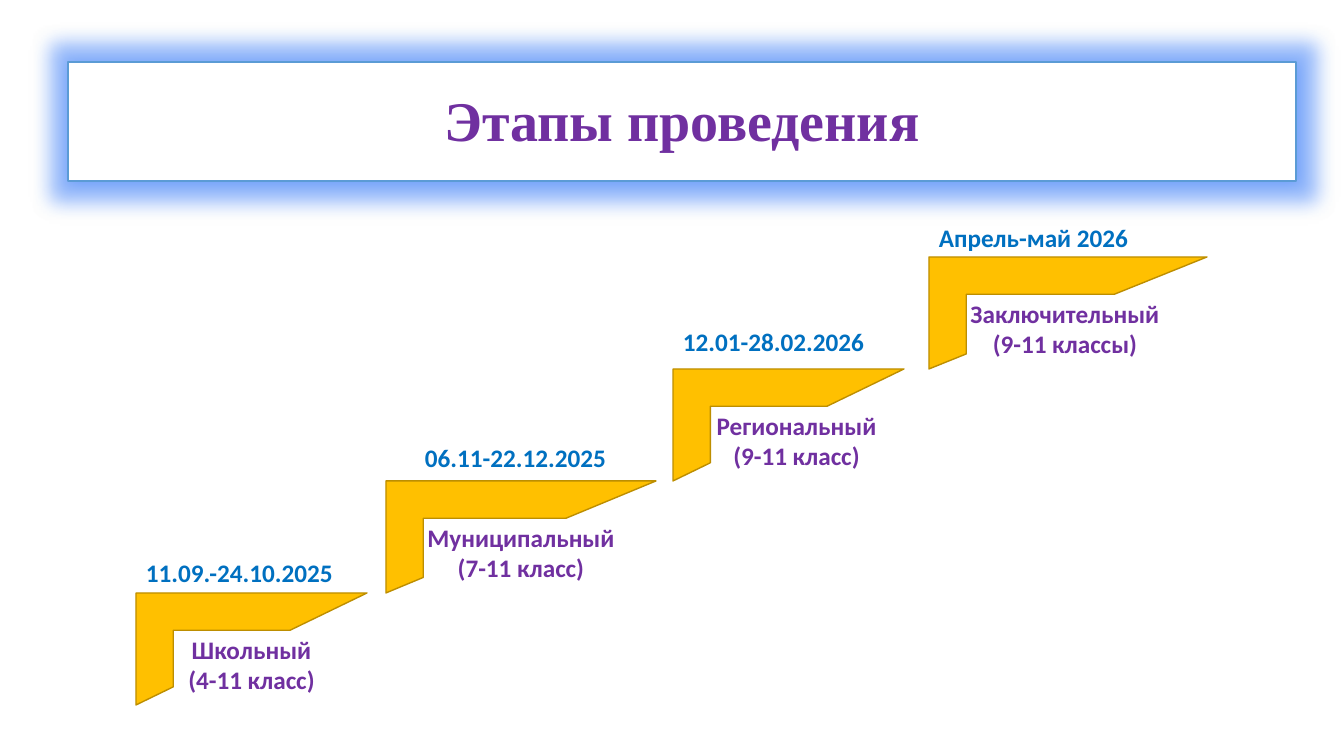
from lxml import etree
from pptx import Presentation
from pptx.dml.color import RGBColor
from pptx.enum.shapes import MSO_SHAPE
from pptx.enum.text import MSO_ANCHOR, PP_ALIGN
from pptx.oxml.ns import qn
from pptx.util import Pt

HALF_FRAME = MSO_SHAPE.HALF_FRAME
MIDDLE, TOP = MSO_ANCHOR.MIDDLE, MSO_ANCHOR.TOP
CENTER, LEFT = PP_ALIGN.CENTER, PP_ALIGN.LEFT
SLIDE_WIDTH, SLIDE_HEIGHT = 1344, 756
EMU_PER_PX = 12192000 / SLIDE_WIDTH
COLORS = {
    "paper": "FFFFFF",
    "banner_line": "5B9BD5",
    "glow": "3F80F8",
    "step": "FFC000",
    "step_line": "BD8E00",
    "name": "7030A0",
    "date": "0070C0",
}
STEP_HEIGHT = 112
LOWEST_STEP_TOP = 593
STAGES = [
    {"left": 136, "width": 231, "name": ["Школьный", "(4-11 класс)"],
     "date": "11.09.-24.10.2025", "date_rise": 41},
    {"left": 386, "width": 270, "name": ["Муниципальный", "(7-11 класс)"],
     "date": "06.11-22.12.2025", "date_rise": 44, "date_shift": 29},
    {"left": 673, "width": 231, "name": ["Региональный", "(9-11 класс)"],
     "date": "12.01-28.02.2026", "date_rise": 48, "name_shift": 8},
    {"left": 929, "width": 278, "name": ["Заключительный", "(9-11 классы)"],
     "date": "Апрель-май 2026", "date_rise": 40, "name_shift": -3},
]


def px(length):
    """Turn pixels into EMU."""
    return round(length * EMU_PER_PX)


def rgb(name):
    """Look up a colour by its role."""
    return RGBColor.from_string(COLORS[name])


def write(shape, lines, color, size=18, font="Calibri", align=CENTER,
          anchor=MIDDLE, insets=(10, 5, 10, 5)):
    """Put bold lines of text into a shape."""
    frame = shape.text_frame
    frame.word_wrap = True
    frame.vertical_anchor = anchor
    (frame.margin_left, frame.margin_top,
     frame.margin_right, frame.margin_bottom) = map(px, insets)
    frame.text = "\n".join(lines)
    for paragraph in frame.paragraphs:
        paragraph.alignment = align
        paragraph.font.name = font
        paragraph.font.size = Pt(size)
        paragraph.font.bold = True
        paragraph.font.color.rgb = rgb(color)


def paint(shape, fill, line):
    """Give a shape a flat fill and a thin outline."""
    shape.shadow.inherit = False
    shape.fill.solid()
    shape.fill.fore_color.rgb = rgb(fill)
    shape.line.color.rgb = rgb(line)
    shape.line.width = Pt(1)


def add_halo(shape, glow_radius, shadow_radius):
    """Surround a shape with a wide glow and a narrower even shadow."""
    effects = shape.element.spPr.find(qn("a:effectLst"))
    halos = [("a:glow", {"rad": px(glow_radius)}),
             ("a:outerShdw", {"blurRad": px(shadow_radius), "dist": 0,
                              "algn": "ctr", "rotWithShape": 0})]
    for tag, settings in halos:
        halo = etree.SubElement(effects, qn(tag))
        for key, value in settings.items():
            halo.set(key, str(value))
        tint = etree.SubElement(halo, qn("a:srgbClr"), val=COLORS["glow"])
        etree.SubElement(tint, qn("a:alpha"), val="50000")


def add_banner(slide, left, top, width, height):
    """Place the glowing title banner."""
    title = slide.shapes.title
    title.left, title.top, title.width, title.height = map(
        px, (left, top, width, height))
    paint(title, "paper", "banner_line")
    add_halo(title, 38, 14)
    write(title, ["Этапы проведения"], "name", size=40,
          font="Times New Roman", insets=(10, 5, 10, 9))


def add_stage(slide, left, top, width, height, stage):
    """Place one stair step with its name inside and its date above."""
    step = slide.shapes.add_shape(
        HALF_FRAME, *map(px, (left, top, width, height)))
    paint(step, "step", "step_line")
    name_inset = 10 + 2 * stage.get("name_shift", 0)
    write(step, stage["name"], "name", insets=(name_inset, 36, 10, 5))
    date = slide.shapes.add_textbox(
        px(left + stage.get("date_shift", 0)), px(top - stage["date_rise"]),
        px(215), px(40))
    write(date, [stage["date"]], "date", align=LEFT, anchor=TOP)


def main():
    """Build the slide of contest stages."""
    deck = Presentation()
    deck.slide_width, deck.slide_height = px(SLIDE_WIDTH), px(SLIDE_HEIGHT)
    slide = deck.slides.add_slide(deck.slide_layouts.get_by_name("Title Only"))
    add_banner(slide, 68, 62, 1228, 119)
    for level, stage in enumerate(STAGES):
        add_stage(slide, stage["left"], LOWEST_STEP_TOP - level * STEP_HEIGHT,
                  stage["width"], STEP_HEIGHT, stage)
    deck.save("out.pptx")


if __name__ == "__main__":
    main()
